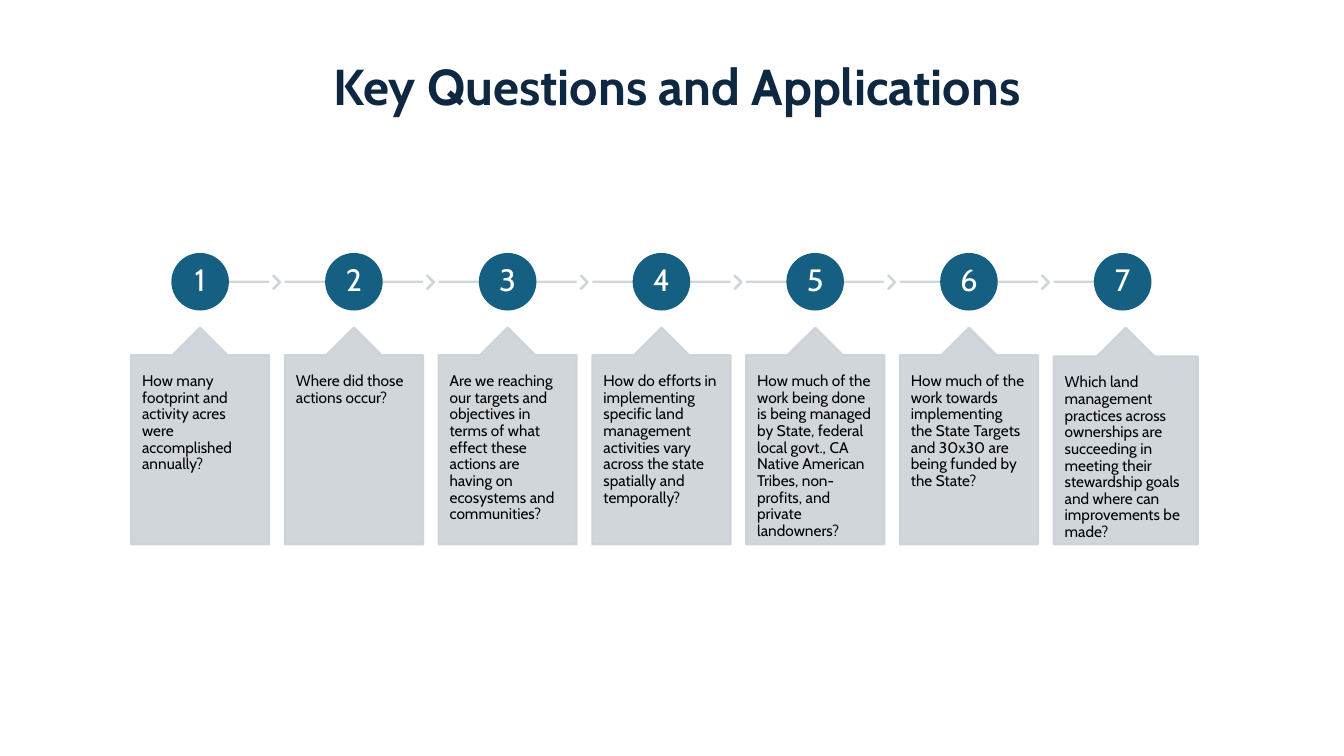
import pptx
import pptx.util
import pptx.dml.color
import pptx.enum.shapes
import pptx.enum.text
import pptx.oxml
import pptx.oxml.ns

PX = 9144  # 100 px to the inch
NAVY, TEAL, GREY, WHITE, BLACK = "0E2841", "156082", "CCD2D8", "FFFFFF", "000000"
KIND = pptx.enum.shapes.MSO_SHAPE
ALIGN = pptx.enum.text.PP_ALIGN
ANCHOR = pptx.enum.text.MSO_ANCHOR

TITLE = "Key Questions and Applications"
ASKS = [
    "How many footprint and activity acres were accomplished annually?",
    "Where did those actions occur?",
    "Are we reaching our targets and objectives in terms of what effect these "
    "actions are having on ecosystems and communities?",
    "How do efforts in implementing specific land management activities vary "
    "across the state spatially and temporally?",
    "How much of the work being done is being managed by State, federal local "
    "govt., CA Native American Tribes, non-profits, and private landowners?",
    "How much of the work towards implementing the State Targets and 30x30 are "
    "being funded by the State?",
    "Which land management practices across ownerships are succeeding in meeting "
    "their stewardship goals and where can improvements be made?",
]


def px(*sizes):
    return [pptx.util.Emu(round(size * PX)) for size in sizes]


def tint(format, hue, alpha=100):
    """Give a fill a solid colour, with alpha in percent."""
    format.solid()
    format.fore_color.rgb = pptx.dml.color.RGBColor.from_string(hue)
    if alpha < 100:
        node = format._xPr.find(".//" + pptx.oxml.ns.qn("a:srgbClr"))
        child = pptx.oxml.ns.qn("a:alpha")
        node.makeelement(child)
        node.append(node.makeelement(child, {"val": str(alpha * 1000)}))


def write(shape, text, size, hue, align, anchor, pads, bold=False):
    """Set one paragraph; pads are left, top, right and bottom."""
    frame = shape.text_frame
    frame.word_wrap = True
    frame.vertical_anchor = anchor
    for side, pad in zip(("left", "top", "right", "bottom"), px(*pads)):
        setattr(frame, "margin_" + side, pad)
    para = frame.paragraphs[0]
    para.alignment = align
    para.line_spacing = 0.9
    run = para.add_run()
    run.text = text
    style = {"name": "Cabin", "size": pptx.util.Pt(size), "bold": bold}
    for name, value in style.items():
        setattr(run.font, name, value)
    tint(run.font.fill, hue)


def draw(slide, kind, box, hue, alpha=100, bends=()):
    """Add a preset shape whose line matches its fill."""
    shape = slide.shapes.add_shape(kind, *px(*box))
    shape.shadow.inherit = False
    for spot, bend in enumerate(bends):
        shape.adjustments[spot] = bend
    tint(shape.fill, hue, alpha)
    tint(shape.line.fill, hue, alpha)
    shape.line.width = pptx.util.Pt(1.5)
    return shape


def rail(slide, start, end, y):
    line = slide.shapes.add_connector(
        pptx.enum.shapes.MSO_CONNECTOR.STRAIGHT, *px(start, y, end, y))
    tint(line.line.fill, GREY, 90)
    line.line.width = pptx.util.Pt(1.5)
    props = line._element.spPr
    props.append(props.makeelement(pptx.oxml.ns.qn("a:effectLst")))


def head(slide, x, y, w, h):
    box = slide.shapes.add_textbox(*px(x, y, w, h))
    write(box, TITLE, 36, NAVY, ALIGN.CENTER, ANCHOR.BOTTOM, (20, 5, 10, 5), True)


def step(slide, x, y, w, h, number, ask, first, last):
    """Place a numbered circle on its rail, above its question."""
    dot, wide = 55, 137
    mid = x + wide / 2
    level = y + dot / 2
    rail(slide, mid if first else x, mid if last else x + wide, level)
    if not last:
        draw(slide, KIND.CHEVRON, (x + wide + 4, level - 6, 7, 13), GREY, 90, [0.9])
    disc = draw(slide, KIND.OVAL, (mid - dot / 2, y, dot, dot), TEAL)
    write(disc, str(number), 22, WHITE, ALIGN.CENTER, ANCHOR.MIDDLE, (2, 2, 2, 2))
    card = draw(slide, KIND.UP_ARROW_CALLOUT, (x, y + 73, w, h - 73),
                GREY, 90, [0.5, 0.2, 0.2, 1])
    write(card, ask, 11, BLACK, ALIGN.LEFT, ANCHOR.TOP, (11, 18, 11, 18))


def steps(slide, x, y, w, h):
    """Spread the questions evenly; the last card is a little wider."""
    count = len(ASKS)
    end = 143
    pitch = (w - end) / (count - 1)
    for spot, ask in enumerate(ASKS):
        last = spot == count - 1
        step(slide, x + spot * pitch, y, end if last else 137, h,
             spot + 1, ask, spot == 0, last)


def main():
    deck = pptx.Presentation()
    deck.slide_width, deck.slide_height = px(1333, 750)
    slide = deck.slides.add_slide(deck.slide_layouts[6])
    tint(slide.background.fill, WHITE)
    head(slide, 129, -25, 1075, 145)
    steps(slide, 130, 252, 1058, 288)
    deck.save("out.pptx")


if __name__ == "__main__":
    main()
